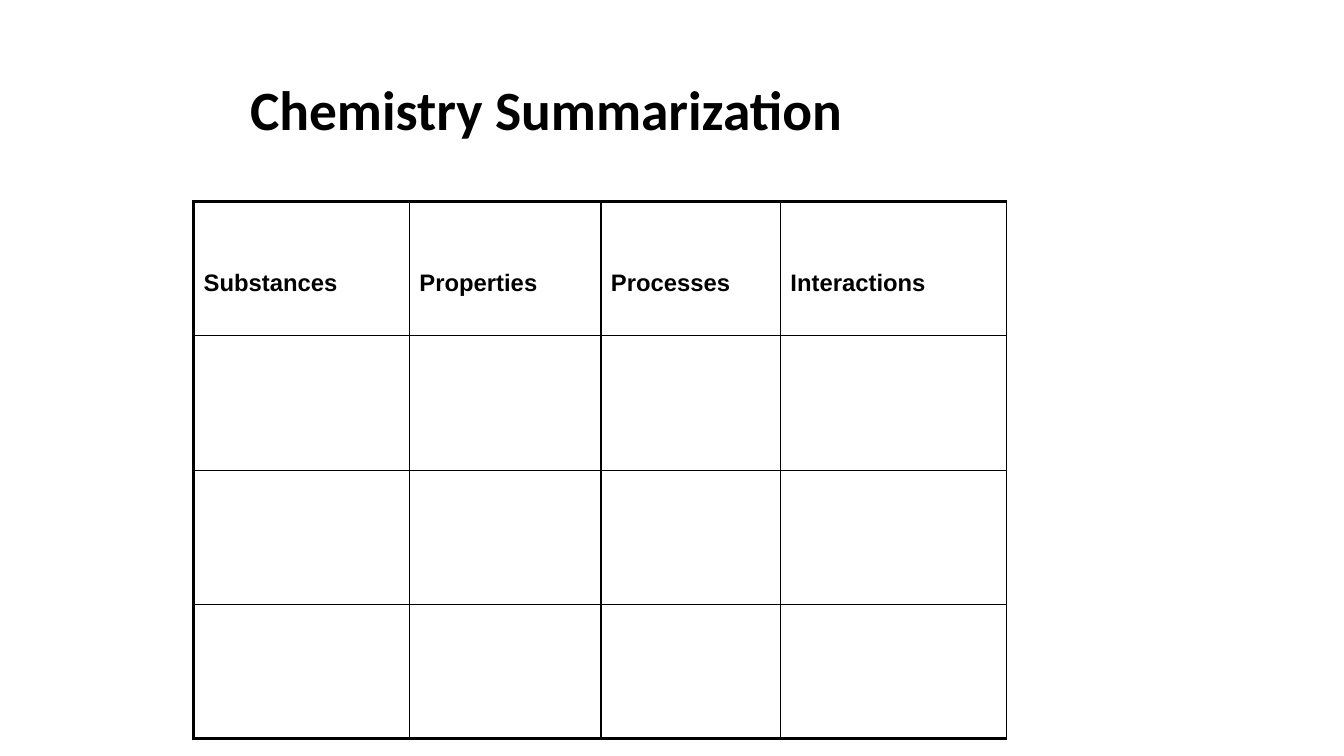
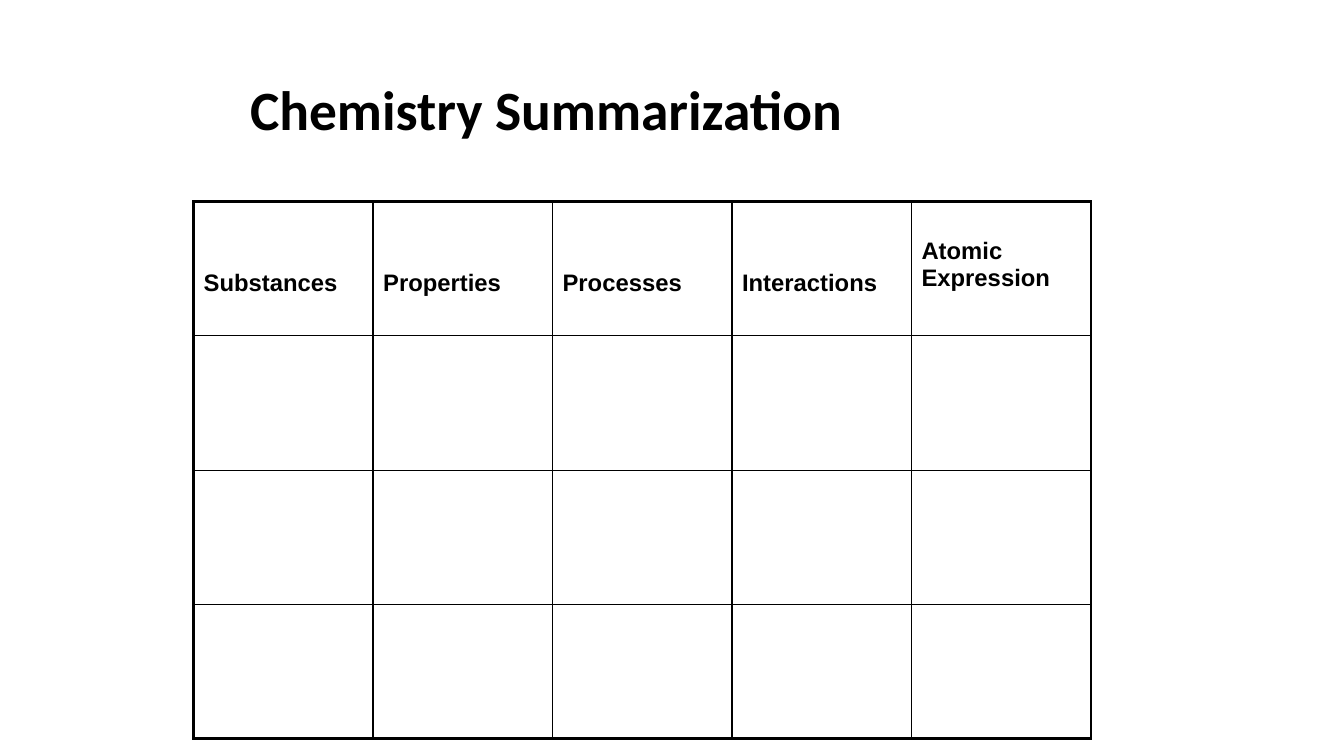
from lxml import etree
from pptx import Presentation
from pptx.dml.color import RGBColor
from pptx.enum.text import MSO_ANCHOR, MSO_AUTO_SIZE, PP_ALIGN
from pptx.oxml.ns import qn
from pptx.util import Inches, Pt

BLACK = RGBColor(0, 0, 0)
TOP, MIDDLE = MSO_ANCHOR.TOP, MSO_ANCHOR.MIDDLE
LEFT = PP_ALIGN.LEFT
NO_FIT = MSO_AUTO_SIZE.NONE
THIN, THICK = 1, 2.25
ROWS, HEIGHT = 4, 5.33
LOW, HIGH = 0.68, 0.36
HEADS = [("Substances", LOW), ("Properties", LOW),
         ("Processes", LOW), ("Interactions", LOW)]
EXTRA = ("Atomic Expression", HIGH)


def add_run(para, text, font, size):
    run = para.add_run()
    run.text = text
    run.font.name = font
    run.font.size = Pt(size)
    run.font.bold = True
    run.font.color.rgb = BLACK


def add_title(slide, text):
    title = slide.shapes.title
    title.left, title.top = Inches(2.38), Inches(0.61)
    title.width, title.height = Inches(8), Inches(1.05)
    frame = title.text_frame
    frame.word_wrap = True
    frame.auto_size = NO_FIT
    frame.vertical_anchor = MIDDLE
    frame.margin_bottom = Inches(0.09)
    para = frame.paragraphs[0]
    para.alignment = LEFT
    para.line_spacing = 0.9
    add_run(para, text, "Calibri", 39.6)


def set_edges(cell, left, right, top, bottom):
    props = cell._tc.get_or_add_tcPr()
    edges = zip(("lnL", "lnR", "lnT", "lnB"), (left, right, top, bottom))
    for place, (tag, width) in enumerate(edges):
        line = etree.Element(qn("a:" + tag), w=str(Pt(width)))
        fill = etree.SubElement(line, qn("a:solidFill"))
        etree.SubElement(fill, qn("a:srgbClr"), val=str(BLACK))
        props.insert(place, line)


def add_grid(slide, heads, widths, right):
    count = len(heads)
    frame = slide.shapes.add_table(
        ROWS, count, Inches(1.92), Inches(2),
        Inches(sum(widths)), Inches(HEIGHT))
    table = frame.table
    table.first_row = False
    table.horz_banding = False
    for col, width in zip(table.columns, widths):
        col.width = Inches(width)
    for row in range(ROWS):
        table.rows[row].height = Inches(HEIGHT / ROWS)
        for col in range(count):
            cell = table.cell(row, col)
            cell.fill.background()
            set_edges(cell,
                      THIN if col else THICK,
                      right if col == count - 1 else THIN,
                      THIN if row else THICK,
                      THICK if row == ROWS - 1 else THIN)
    for col, (text, drop) in enumerate(heads):
        cell = table.cell(0, col)
        cell.vertical_anchor = TOP
        cell.margin_top = Inches(drop)
        add_run(cell.text_frame.paragraphs[0], text, "Arial", 17)


def add_page(deck, heads, widths, right):
    slide = deck.slides.add_slide(deck.slide_layouts[5])
    add_title(slide, "Chemistry Summarization")
    add_grid(slide, heads, widths, right)


def main():
    deck = Presentation()
    deck.slide_width, deck.slide_height = Inches(13.33), Inches(7.5)
    add_page(deck, HEADS, [2.14, 1.9, 1.78, 2.24], THIN)
    add_page(deck, HEADS + [EXTRA], [1.78] * 5, THICK)
    deck.save("out.pptx")


if __name__ == "__main__":
    main()
